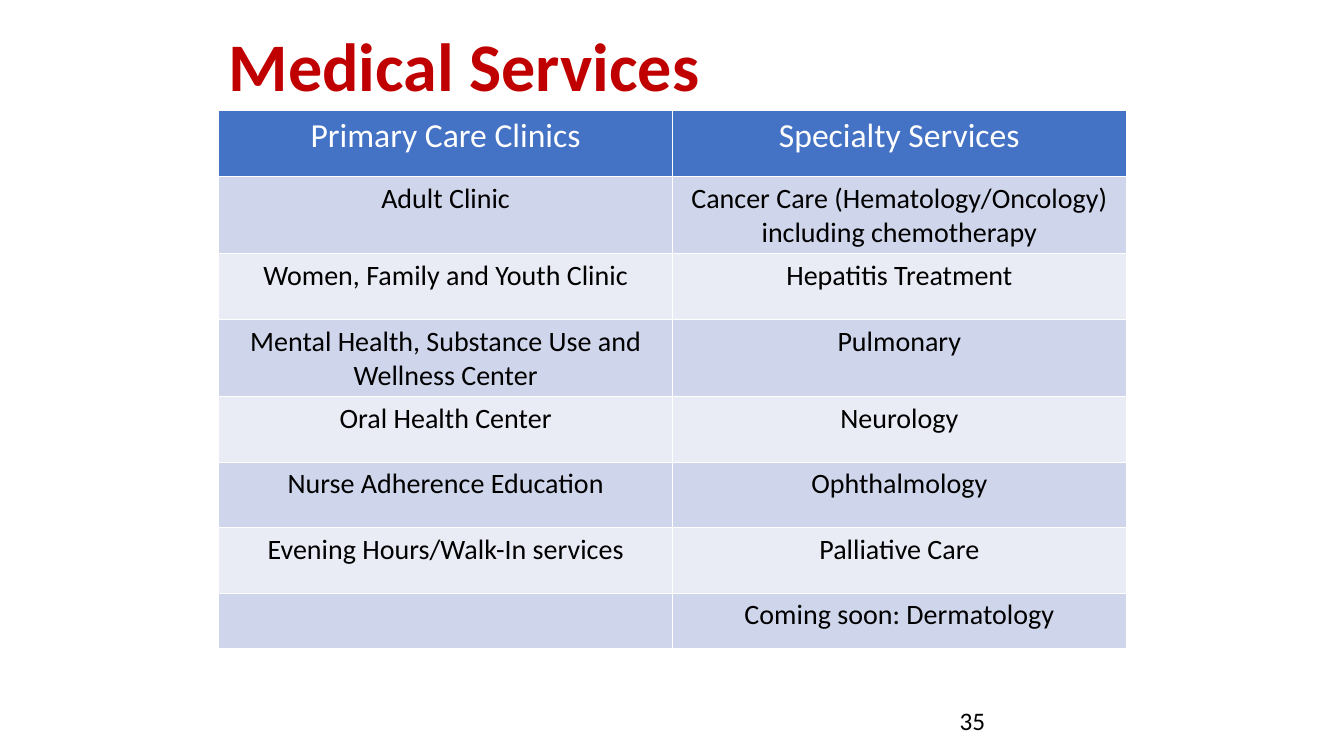
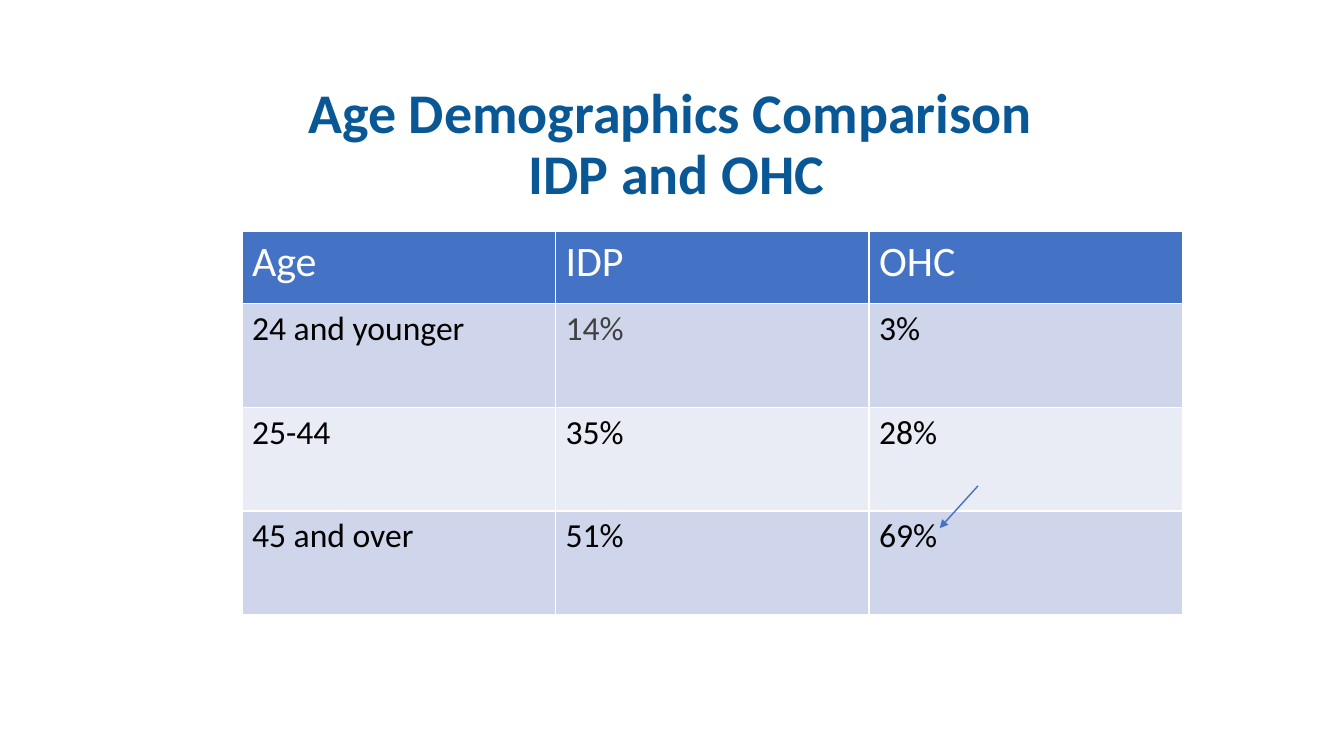
from lxml import etree
from pptx import Presentation
from pptx import util as u
from pptx.dml.color import RGBColor
from pptx.enum import shapes, text
from pptx.oxml.ns import qn

WHITE, BLACK, GREY = "FFFFFF", "000000", "404040"
RED, NAVY, BLUE = "C00000", "095895", "4472C4"
BANDS = ("CFD5EA", "E9EBF5")
LEFT, CENTER = text.PP_ALIGN.LEFT, text.PP_ALIGN.CENTER


def color(value):
    return RGBColor.from_string(value)


class SlideWriter:
    """Holds the shared style and the slide being filled."""

    font_name = "Calibri"

    def __init__(self):
        self.deck = Presentation()
        self.deck.slide_width = u.Inches(13.33)
        self.deck.slide_height = u.Inches(7.5)
        self.page = None

    def new_page(self):
        self.page = self.deck.slides.add_slide(self.deck.slide_layouts[6])

    def style(self, para, size, ink, bold=False, align=LEFT):
        para.alignment = align
        para.font.name = self.font_name
        para.font.size = u.Pt(size)
        para.font.bold = bold
        para.font.color.rgb = color(ink)

    def text_box(self, words, area, size, ink, bold=False, align=LEFT):
        box = self.page.shapes.add_textbox(*map(u.Inches, area))
        frame = box.text_frame
        frame.word_wrap = True
        para = frame.paragraphs[0]
        para.text = words
        self.style(para, size, ink, bold, align)
        return frame

    def title(self, words, area, size, ink, align=LEFT):
        frame = self.text_box(words, area, size, ink, True, align)
        frame.vertical_anchor = text.MSO_ANCHOR.MIDDLE
        frame.paragraphs[0].line_spacing = 0.9

    def cell_borders(self, cell):
        properties = cell._tc.get_or_add_tcPr()
        for side in ("lnL", "lnR", "lnT", "lnB"):
            line = etree.SubElement(properties, qn(f"a:{side}"), w=str(u.Pt(1)))
            fill = etree.SubElement(line, qn("a:solidFill"))
            etree.SubElement(fill, qn("a:srgbClr"), val=WHITE)

    def table(self, rows, corner, column_width, heights, head_size, body_size, align=LEFT):
        """Draw a header row over banded body rows."""
        columns = len(rows[0])
        area = (*corner, column_width * columns, sum(heights))
        frame = self.page.shapes.add_table(len(rows), columns, *map(u.Inches, area))
        grid = frame.table
        for column in grid.columns:
            column.width = u.Inches(column_width)
        for index, (words, height) in enumerate(zip(rows, heights)):
            grid.rows[index].height = u.Inches(height)
            if index == 0:
                size, ink, back = head_size, WHITE, BLUE
            else:
                size, ink, back = body_size, BLACK, BANDS[(index - 1) % 2]
            for cell, label in zip(grid.rows[index].cells, words):
                self.cell_borders(cell)
                cell.fill.solid()
                cell.fill.fore_color.rgb = color(back)
                para = cell.text_frame.paragraphs[0]
                para.text = label
                self.style(para, size, ink, align=align)
        return grid

    def arrow(self, start, end):
        line = self.page.shapes.add_connector(
            shapes.MSO_CONNECTOR.STRAIGHT, *map(u.Inches, (*start, *end)))
        line.line.color.rgb = color(BLUE)
        line.line.width = u.Pt(1)
        etree.SubElement(line.line._get_or_add_ln(), qn("a:tailEnd"), type="triangle")
        etree.SubElement(line._element.spPr, qn("a:effectLst"))


def medical_services(writer):
    writer.new_page()
    writer.title("Medical Services", (2.17, 0.3, 9, 0.78), 48.6, RED)
    rows = [
        ("Primary Care Clinics", "Specialty Services"),
        ("Adult Clinic", "Cancer Care (Hematology/Oncology) including chemotherapy"),
        ("Women, Family and Youth Clinic", "Hepatitis Treatment"),
        ("Mental Health, Substance Use and Wellness Center", "Pulmonary"),
        ("Oral Health Center", "Neurology"),
        ("Nurse Adherence Education", "Ophthalmology"),
        ("Evening Hours/Walk-In services", "Palliative Care"),
        ("", "Coming soon: Dermatology"),
    ]
    writer.table(rows, (2.17, 1.1), 4.5, [0.65] * 7 + [0.55], 24, 20, CENTER)
    # Page number
    writer.text_box("35", (9.42, 6.95, 3, 0.4), 18, BLACK)


def age_demographics(writer):
    writer.new_page()
    writer.title("Age Demographics Comparison \vIDP and OHC",
                 (0.96, 0.99, 11.5, 0.91), 40, NAVY, CENTER)
    rows = [
        ("Age", "IDP", "OHC"),
        ("24 and younger", "14%", "3%"),
        ("25-44", "35%", "28%"),
        ("45 and over", "51%", "69%"),
    ]
    grid = writer.table(rows, (2.4, 2.3), 3.11, [0.71] + [1.03] * 3, 30, 24)
    # Softer ink for the youngest IDP group
    grid.cell(1, 1).text_frame.paragraphs[0].font.color.rgb = color(GREY)
    # Arrow to the largest OHC group
    writer.arrow((9.7, 4.82), (9.32, 5.24))


def main():
    writer = SlideWriter()
    medical_services(writer)
    age_demographics(writer)
    writer.deck.save("out.pptx")


if __name__ == "__main__":
    main()
